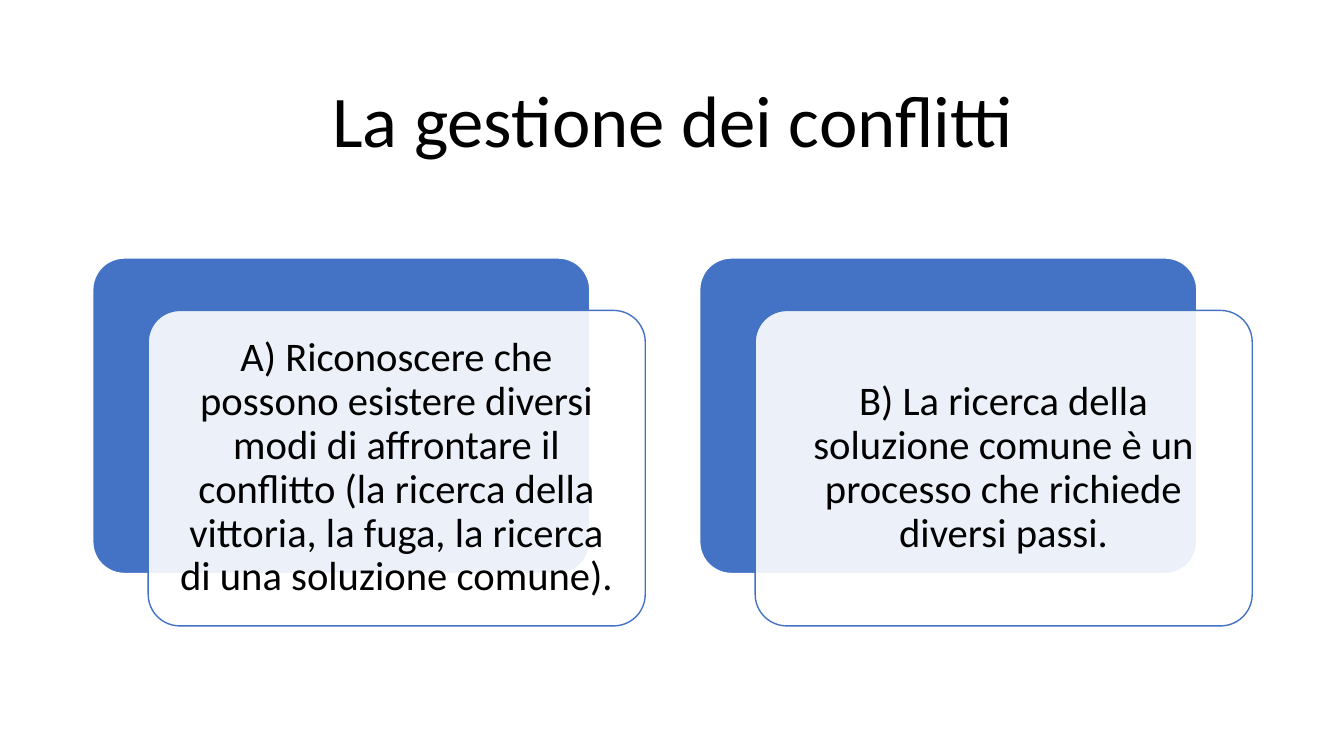
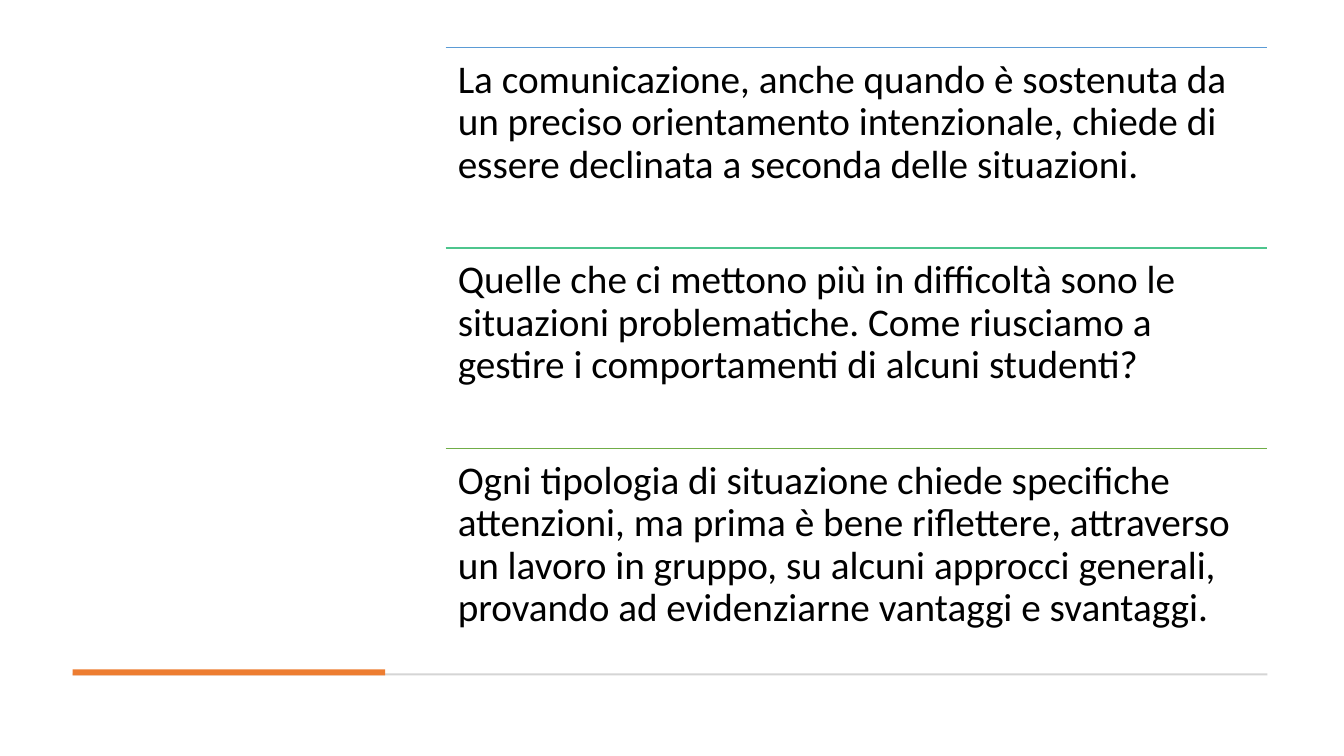
from lxml.etree import SubElement
from pptx import Presentation
from pptx.dml.color import RGBColor
from pptx.enum.shapes import MSO_CONNECTOR as Connector, MSO_SHAPE as Shape
from pptx.enum.text import MSO_ANCHOR as Anchor, PP_ALIGN as Align
from pptx.oxml.ns import qn
from pptx.util import Inches, Pt

BLUE, WHITE, BLACK = "4472C4", "FFFFFF", "000000"
ORANGE, GREY = "ED7D31", "D5D5D5"

CARDS = [
    "A) Riconoscere che possono esistere diversi modi di affrontare il conflitto "
    "(la ricerca della vittoria, la fuga, la ricerca di una soluzione comune).",
    "B) La ricerca della soluzione comune è un processo che richiede diversi passi.",
]
STATEMENTS = [
    ("5B9BD5", "La comunicazione, anche quando è sostenuta da un preciso orientamento "
               "intenzionale, chiede di essere declinata a seconda delle situazioni."),
    ("4DC58D", "Quelle che ci mettono più in difficoltà sono le situazioni problematiche. "
               "Come riusciamo a gestire i comportamenti di alcuni studenti?"),
    ("70AD47", "Ogni tipologia di situazione chiede specifiche attenzioni, ma prima è bene "
               "riflettere, attraverso un lavoro in gruppo, su alcuni approcci generali, "
               "provando ad evidenziarne vantaggi e svantaggi."),
]


def rgb(code):
    return RGBColor.from_string(code)


def write(frame, text, size=28, color=BLACK, font="Calibri", align=Align.LEFT,
          anchor=Anchor.TOP, inset=0.12):
    frame.word_wrap = True
    frame.vertical_anchor = anchor
    frame.margin_left = frame.margin_right = Inches(inset)
    frame.margin_top = frame.margin_bottom = Inches(inset)
    paragraph = frame.paragraphs[0]
    paragraph.alignment = align
    paragraph.line_spacing = 0.9
    run = paragraph.add_run()
    run.text = text
    run.font.size = Pt(size)
    run.font.name = font
    run.font.color.rgb = rgb(color)


class Deck:
    def __init__(self):
        self.prs = Presentation()
        self.prs.slide_width = Inches(13.33)
        self.prs.slide_height = Inches(7.5)
        self.slide = None

    def new_slide(self):
        self.slide = self.prs.slides.add_slide(self.prs.slide_layouts[6])

    def text(self, left, top, width, height, content, **style):
        box = self.slide.shapes.add_textbox(
            Inches(left), Inches(top), Inches(width), Inches(height))
        write(box.text_frame, content, **style)

    def title(self, content):
        self.text(0.92, 0.61, 11.5, 1.24, content, size=52, align=Align.CENTER,
                  anchor=Anchor.MIDDLE, inset=0.05)

    def block(self, left, top, width, height, fill, line=None, kind=Shape.RECTANGLE,
              opacity=100):
        block = self.slide.shapes.add_shape(
            kind, Inches(left), Inches(top), Inches(width), Inches(height))
        block.shadow.inherit = False
        block.fill.solid()
        block.fill.fore_color.rgb = rgb(fill)
        if opacity < 100:
            tint = block.fill._xPr.find(qn("a:solidFill"))[0]
            SubElement(tint, qn("a:alpha"), val=str(opacity * 1000))
        if line:
            block.line.color.rgb = rgb(line)
            block.line.width = Pt(1)
        else:
            block.line.fill.background()
        return block

    def rounded(self, left, top, width, height, fill, line, opacity=100):
        panel = self.block(left, top, width, height, fill, line,
                           Shape.ROUNDED_RECTANGLE, opacity)
        panel.adjustments[0] = 0.1
        return panel

    def card(self, left, top, content):
        width, height = 4.93, 3.13
        self.rounded(left, top, width, height, BLUE, WHITE)
        front = self.rounded(left + 0.55, top + 0.52, width, height, WHITE, BLUE, opacity=90)
        write(front.text_frame, content, size=29, align=Align.CENTER, anchor=Anchor.MIDDLE)

    def rule(self, left, top, width, color):
        rule = self.slide.shapes.add_connector(
            Connector.STRAIGHT, Inches(left), Inches(top), Inches(left + width), Inches(top))
        rule.line.color.rgb = rgb(color)
        rule.line.width = Pt(1)
        SubElement(rule._element.spPr, qn("a:effectLst"))

    def save(self):
        self.prs.save("out.pptx")


def conflict_slide(deck):
    deck.new_slide()
    deck.title("La gestione dei conflitti")
    for column, content in enumerate(CARDS):
        deck.card(0.92 + column * 6.02, 2.56, content)


def communication_slide(deck):
    left, width, row_height = 4.42, 8.15, 1.99
    deck.new_slide()
    deck.block(0.72, 6.68, 11.85, 0.02, GREY)
    deck.block(0.72, 6.64, 3.1, 0.06, ORANGE)
    for row, (color, content) in enumerate(STATEMENTS):
        top = 0.47 + row * row_height
        deck.rule(left, top, width, color)
        deck.text(left, top, width, row_height, content)


def main():
    deck = Deck()
    conflict_slide(deck)
    communication_slide(deck)
    deck.save()


if __name__ == "__main__":
    main()
